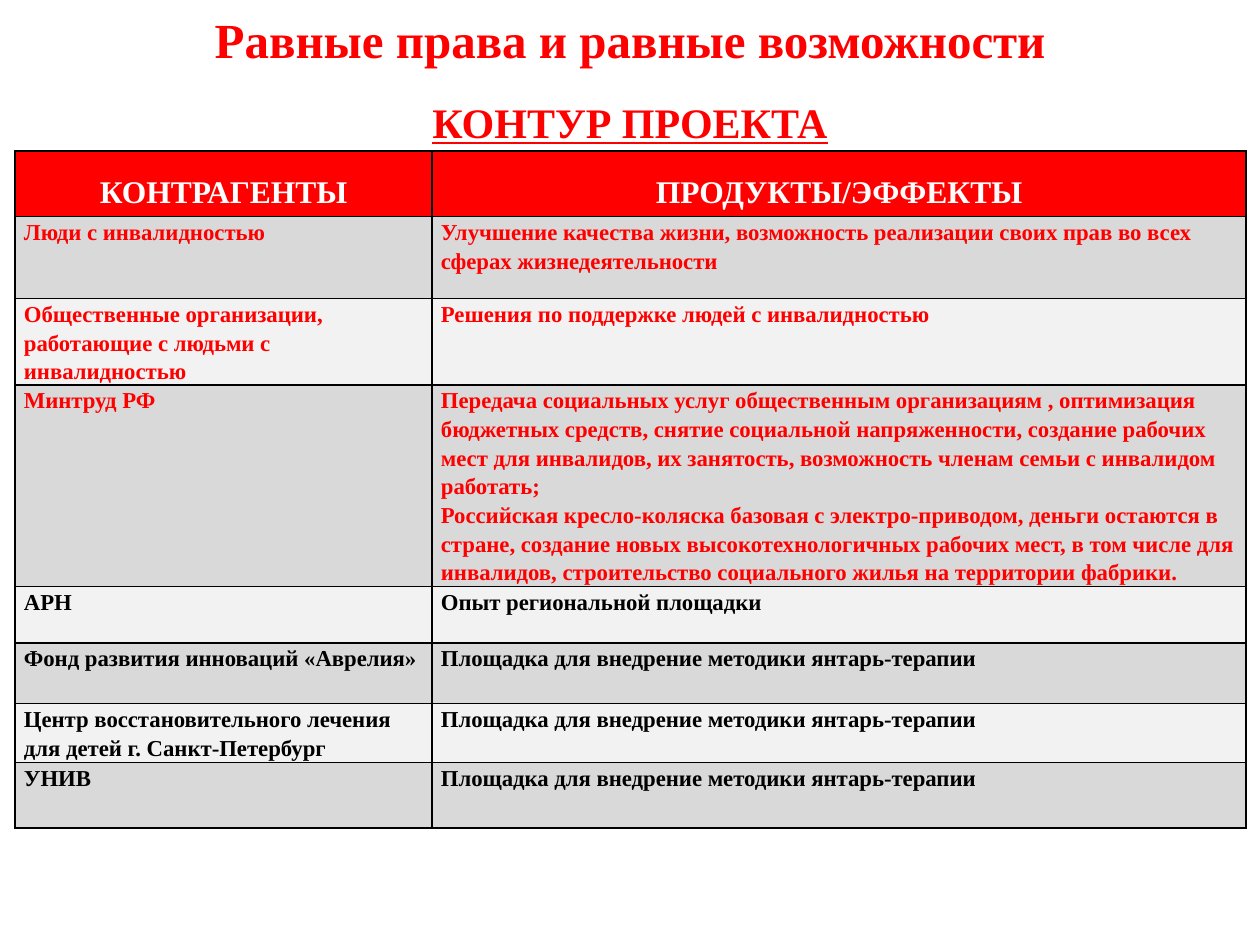
from dataclasses import dataclass
from lxml.etree import SubElement as Sub
from pptx import Presentation
from pptx.dml.color import RGBColor as Rgb
from pptx.enum.text import MSO_ANCHOR as Anchor, PP_ALIGN as Align
from pptx.oxml.ns import qn
from pptx.util import Inches, Pt


@dataclass(frozen=True)
class Theme:
    font: str = "Times New Roman"
    red: str = "FF0000"
    white: str = "FFFFFF"
    black: str = "000000"
    dark: str = "D9D9D9"
    light: str = "F2F2F2"
    title: int = 28
    sub: int = 24
    head: int = 18
    body: int = 13
    gap: int = 16
    line: int = 1


class Deck:
    def __init__(self, theme):
        self.theme = theme
        self.prs = Presentation()
        self.prs.slide_width, self.prs.slide_height = Inches(10), Inches(7.5)
        self.slide = self.prs.slides.add_slide(self.prs.slide_layouts[6])

    def run(self, par, text, size, color, under=None):
        run = par.add_run()
        run.text = text
        font = run.font
        font.name, font.size, font.bold = self.theme.font, Pt(size), True
        font.underline = under
        font.color.rgb = Rgb.from_string(color)

    def title(self, box, main, sub):
        t = self.theme
        frame = self.slide.shapes.add_textbox(*map(Inches, box)).text_frame
        frame.word_wrap = True
        frame.vertical_anchor = Anchor.MIDDLE
        top, low = frame.paragraphs[0], frame.add_paragraph()
        top.alignment = low.alignment = Align.CENTER
        low.space_before = Pt(t.gap)
        self.run(top, main, t.title, t.red)
        self.run(low, sub, t.sub, t.red, True)

    def border(self, cell):
        props = cell._tc.get_or_add_tcPr()
        for side in ("lnL", "lnR", "lnT", "lnB"):
            line = Sub(props, qn(f"a:{side}"), w=str(Pt(self.theme.line)))
            fill = Sub(line, qn("a:solidFill"))
            Sub(fill, qn("a:srgbClr"), val=self.theme.black)

    def cell(self, cell, text, size, color, fill, space, align=None):
        self.border(cell)
        cell.fill.solid()
        cell.fill.fore_color.rgb = Rgb.from_string(fill)
        frame = cell.text_frame
        for i, part in enumerate(text.split("\n")):
            par = frame.add_paragraph() if i else frame.paragraphs[0]
            par.line_spacing, par.alignment = space, align
            self.run(par, part, size, color)

    def table(self, left, top, cols, highs, head, rows, reds):
        t = self.theme
        grid = self.slide.shapes.add_table(
            len(highs), len(cols), Inches(left), Inches(top),
            Inches(sum(cols)), Inches(sum(highs))).table
        for col, wide in zip(grid.columns, cols):
            col.width = Inches(wide)
        for row, high in zip(grid.rows, highs):
            row.height = Inches(high)
        # Header row
        for c, text in enumerate(head):
            self.cell(grid.cell(0, c), text, t.head, t.white, t.red, 1.5,
                      Align.CENTER)
        # Body rows with alternating fill
        for r, row in enumerate(rows, 1):
            color = t.red if r <= reds else t.black
            fill = t.dark if r % 2 else t.light
            for c, text in enumerate(row):
                cell = grid.cell(r, c)
                cell.margin_left = cell.margin_right = Inches(0.07)
                cell.margin_top = cell.margin_bottom = 0
                self.cell(cell, text, t.body, color, fill, 1.15)


SITE = "Площадка для внедрение методики янтарь-терапии"
HEAD = ("КОНТРАГЕНТЫ", "ПРОДУКТЫ/ЭФФЕКТЫ")
ROWS = [
    ("Люди с инвалидностью",
     "Улучшение качества жизни, возможность реализации своих прав во всех "
     "сферах жизнедеятельности"),
    ("Общественные организации, работающие с людьми с инвалидностью",
     "Решения по поддержке людей с инвалидностью"),
    ("Минтруд РФ",
     "Передача социальных услуг общественным организациям , оптимизация "
     "бюджетных средств, снятие социальной напряженности, создание рабочих "
     "мест для инвалидов, их занятость, возможность членам семьи с инвалидом "
     "работать;\n"
     "Российская кресло-коляска базовая с электро-приводом, деньги остаются "
     "в стране, создание новых высокотехнологичных рабочих мест, в том числе "
     "для инвалидов, строительство социального жилья на территории фабрики."),
    ("АРН", "Опыт региональной площадки"),
    ("Фонд развития инноваций «Аврелия»", SITE),
    ("Центр восстановительного лечения для детей г. Санкт-Петербург", SITE),
    ("УНИВ", SITE),
]
HIGHS = (0.52, 0.65, 0.68, 1.6, 0.45, 0.48, 0.47, 0.52)


def main():
    deck = Deck(Theme())
    # Partners and effects
    deck.table(0.12, 1.2, (3.31, 6.46), HIGHS, HEAD, ROWS, reds=3)
    # Heading
    deck.title((0.51, 0.34, 8.98, 0.56),
               "Равные права и равные возможности", "КОНТУР ПРОЕКТА")
    deck.prs.save("out.pptx")


if __name__ == "__main__":
    main()
